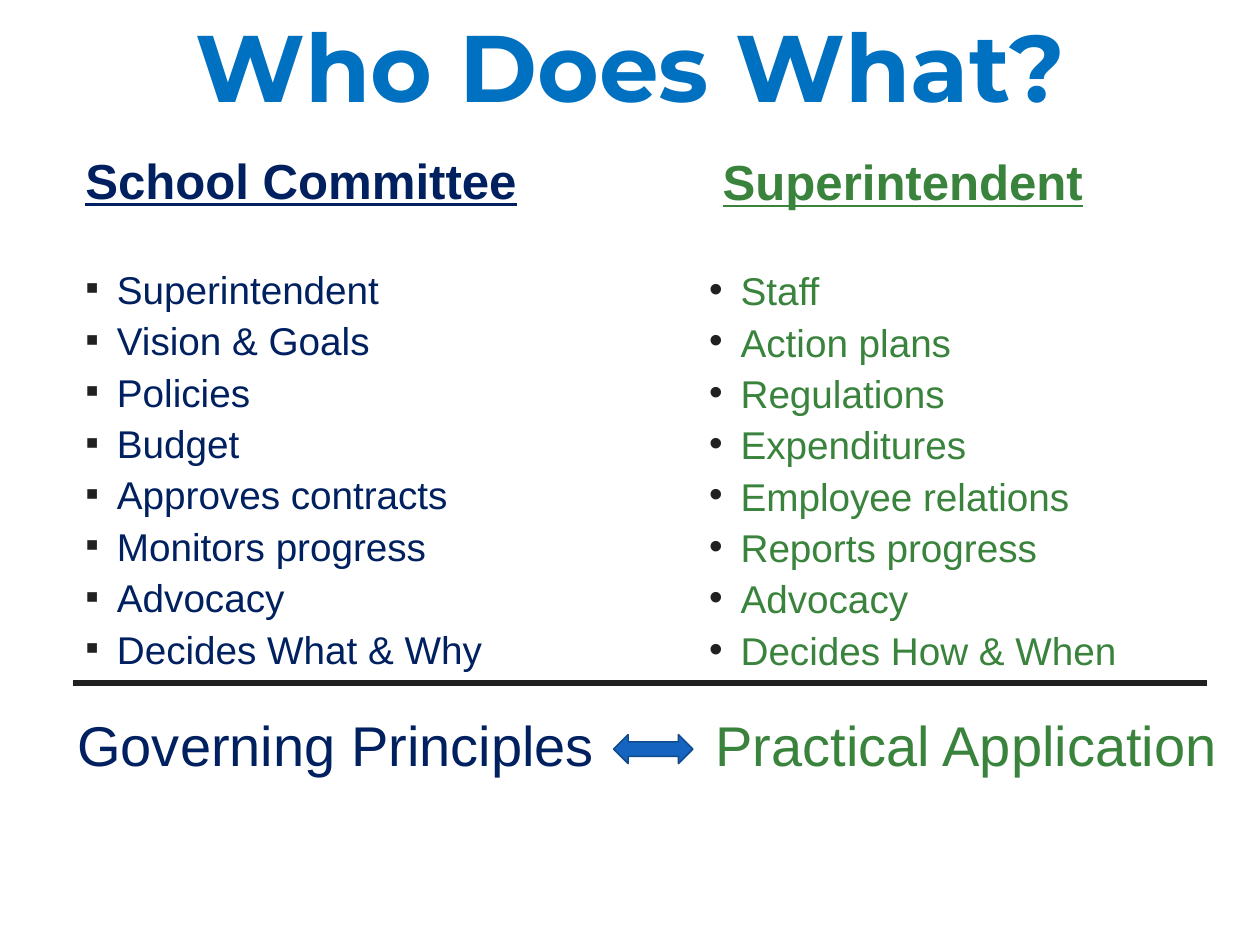
from lxml.etree import SubElement
from pptx import Presentation
from pptx.dml.color import RGBColor
from pptx.enum.shapes import MSO_CONNECTOR, MSO_SHAPE
from pptx.enum.text import PP_ALIGN
from pptx.oxml.ns import qn
from pptx.util import Inches, Pt

NAVY, GREEN, INK = "002060", "39833C", "212121"

deck = Presentation()
deck.slide_width, deck.slide_height = Inches(10), Inches(7.5)
column, row = deck.slide_width / 100, deck.slide_height / 100
slide = deck.slides.add_slide(deck.slide_layouts[6])


def color(code):
    return RGBColor.from_string(code)


def add_text(lines, left, top, width, height, size, code, font="Arial"):
    box = slide.shapes.add_textbox(
        int(left * column), int(top * row), int(width * column), int(height * row))
    frame = box.text_frame
    frame.word_wrap = True
    frame.text = "\n".join(lines)
    for paragraph in frame.paragraphs:
        for run in paragraph.runs:
            run.font.name, run.font.size = font, Pt(size)
            run.font.color.rgb = color(code)
    return frame.paragraphs


title = add_text(["Who Does What?"], 0, 1.6, 100, 16.67, 54, "0070C0", "Montserrat")[0]
title.alignment = PP_ALIGN.CENTER
title.line_spacing = 0.9
title.runs[0].font.bold = True

roles = [
    ("School Committee", 5.8, 16.93, 0, NAVY, "▪",
     ["Superintendent", "Vision & Goals", "Policies", "Budget", "Approves contracts",
      "Monitors progress", "Advocacy", "Decides What & Why"]),
    ("Superintendent", 55.3, 17.07, 1.08, GREEN, "•",
     ["Staff", "Action plans", "Regulations", "Expenditures", "Employee relations",
      "Reports progress", "Advocacy", "Decides How & When"]),
]
for role, left, top, indent, code, bullet, duties in roles:
    heading, *items = add_text([role, *duties], left, top, 41.7, 60, 22.1, code)
    heading.line_spacing = 0.7
    heading._p.get_or_add_pPr().set("marL", str(int(indent * column)))
    heading_font = heading.runs[0].font
    heading_font.size = Pt(28.1)
    heading_font.bold = heading_font.underline = True
    for position, item in enumerate(items):
        item.line_spacing = 0.7
        item.space_before = Pt(10.8 if position else 40.5)
        properties = item._p.get_or_add_pPr()
        properties.set("marL", str(int(2.5 * column)))
        properties.set("indent", str(int(-2.5 * column)))
        bullet_color = SubElement(properties, qn("a:buClr"))
        SubElement(bullet_color, qn("a:srgbClr"), val=INK)
        SubElement(properties, qn("a:buFont"), typeface="Arial")
        SubElement(properties, qn("a:buChar"), char=bullet)

divider = slide.shapes.add_connector(
    MSO_CONNECTOR.STRAIGHT, int(5.8 * column), int(72.27 * row),
    int(95.8 * column), int(72.27 * row))
divider.line.color.rgb = color(INK)
divider.line.width = Pt(3)
SubElement(divider._element.spPr, qn("a:effectLst"))

for summary, left, code in [("Governing Principles", 5.15, NAVY),
                            ("Practical Application", 55.8, GREEN)]:
    add_text([summary], left, 74.53, 43.5, 8.53, 32, code)

link = slide.shapes.add_shape(
    MSO_SHAPE.LEFT_RIGHT_ARROW, int(48.7 * column), int(77.73 * row),
    int(6.3 * column), int(3.07 * row))
link.shadow.inherit = False
link.fill.solid()
link.fill.fore_color.rgb = color("1565C0")
link.line.color.rgb = color("104B8E")
link.line.width = Pt(0.85)

deck.save("out.pptx")
